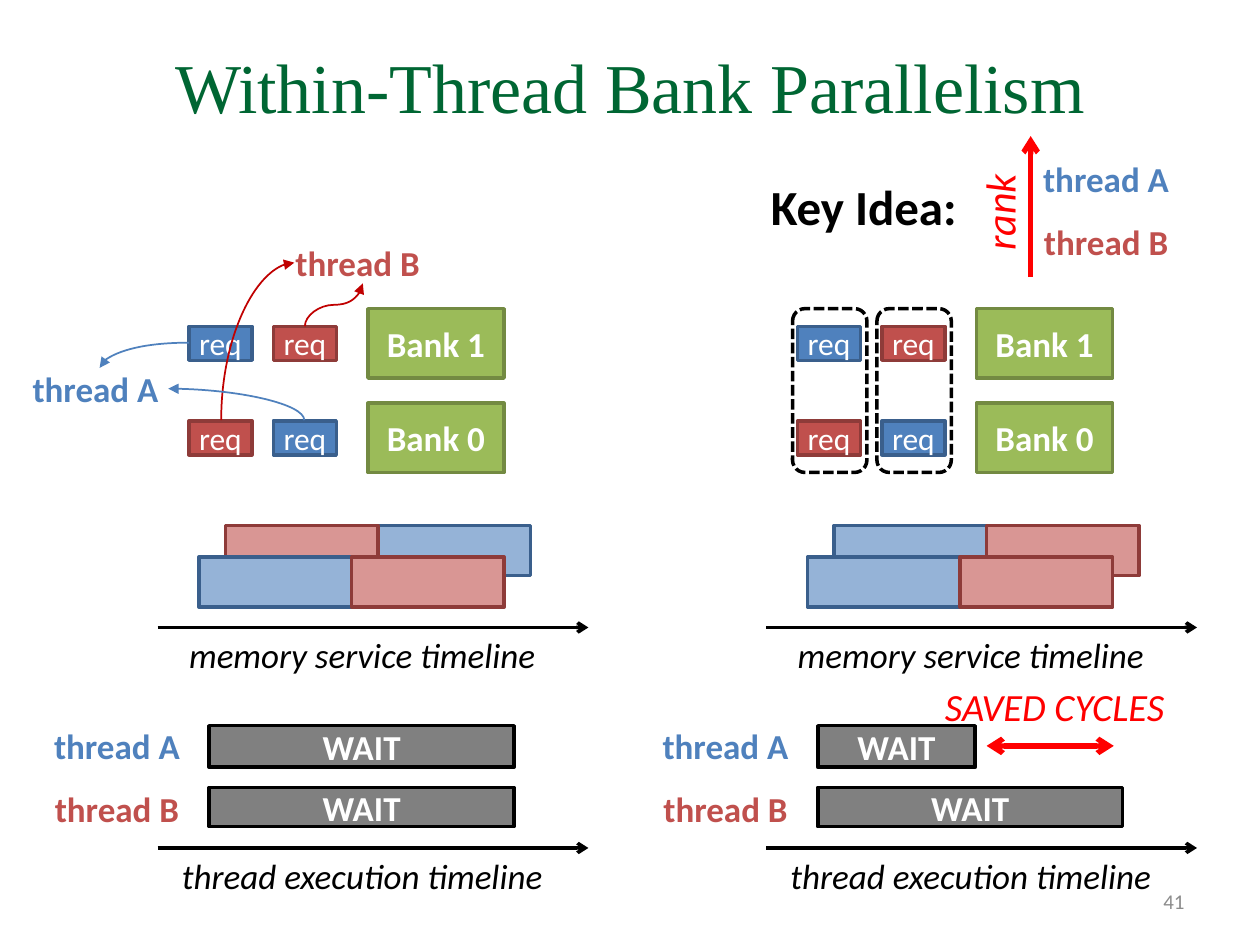
"""Build the slide on within-thread bank parallelism."""
from lxml.etree import SubElement
from pptx import Presentation
from pptx.dml.color import RGBColor
from pptx.enum.dml import MSO_LINE_DASH_STYLE as Dash
from pptx.enum.shapes import MSO_CONNECTOR as Link, MSO_SHAPE as Shape
from pptx.enum.text import MSO_ANCHOR as Anchor, PP_ALIGN as Align
from pptx.oxml.ns import qn
from pptx.util import Inches, Pt

COLORS = {
    "black": "000000", "white": "FFFFFF", "title": "006633", "number": "8C8C8C",
    "alert": "FF0000", "curve": "C00000", "wait": "808080",
    "bank": "9BBB59", "bank_edge": "738A42",
    "A": "4F81BD", "A_light": "95B3D7", "A_edge": "3A5F8C",
    "B": "C0504D", "B_light": "D99694", "B_edge": "8E3B39",
}


def rgb(name):
    return RGBColor.from_string(COLORS[name])


def add_block(at, text="", size=20, color="white", fill=None, edge=None, bold=False,
              italic=False, inset=0.0, anchor=Anchor.MIDDLE, align=Align.CENTER,
              wrap=True, spacing=1.0, form=Shape.RECTANGLE):
    place = [Inches(length) for length in at]
    if edge:
        block = slide.shapes.add_shape(form, *place)
        block.shadow.inherit = False
        block.line.color.rgb = rgb(edge)
        block.line.width = Pt(2)
        if fill:
            block.fill.solid()
            block.fill.fore_color.rgb = rgb(fill)
        else:
            block.fill.background()
    else:
        block = slide.shapes.add_textbox(*place)
    if text:
        frame = block.text_frame
        frame.text = text
        frame.word_wrap = wrap
        frame.vertical_anchor = anchor
        frame.margin_left = frame.margin_right = Inches(inset)
        line = frame.paragraphs[0]
        line.alignment = align
        line.line_spacing = spacing
        font = line.runs[0].font
        font.name, font.size, font.bold, font.italic = "Calibri", Pt(size), bold, italic
        font.color.rgb = rgb(color)
    return block


def add_arrow(start, end, color="black", width=2, heads=("tailEnd",), head="arrow",
              kind=Link.STRAIGHT):
    arrow = slide.shapes.add_connector(kind, *[Inches(length) for length in start + end])
    arrow.line.color.rgb = rgb(color)
    arrow.line.width = Pt(width)
    for tip in heads:
        SubElement(arrow.line._get_or_add_ln(), qn(f"a:{tip}"), type=head)
    SubElement(arrow._element.spPr, qn("a:effectLst"))
    return arrow


deck = Presentation()
deck.slide_width, deck.slide_height = Inches(10), Inches(7.5)
slide = deck.slides.add_slide(deck.slide_layouts[5])

title = slide.shapes.title
title.left, title.top, title.width, title.height = [Inches(n) for n in (0.5, 0.05, 9, 1.25)]
title.text_frame.text = "Within-Thread Bank Parallelism"
title.text_frame.vertical_anchor = Anchor.MIDDLE
title.text_frame.paragraphs[0].alignment = Align.CENTER
title_font = title.text_frame.paragraphs[0].runs[0].font
title_font.name, title_font.size = "Times New Roman", Pt(40)
title_font.color.rgb = rgb("title")

for left in (6.96, 6.29):
    batch = add_block((left, 2.45, 0.59, 1.3), edge="black", form=Shape.ROUNDED_RECTANGLE)
    batch.line.dash_style = Dash.SQUARE_DOT

bank_rows = [("Bank 0", 3.2, "BA"), ("Bank 1", 2.45, "AB")]
sides = [(0, "BA", 1.79, 2.42), (4.83, "AB", 6.62, 1.25)]
for shift, back_threads, back_left, wait_a in sides:
    for left, top, threads in [(back_left, 4.17, back_threads), (1.58 + shift, 4.42, "AB")]:
        slots = [(left + 1.21 * step, thread) for step, thread in enumerate(threads)]
        for slot_left, thread in sorted(slots, key=lambda slot: slot[1]):
            add_block((slot_left, top, 1.21, 0.4), fill=f"{thread}_light", edge=f"{thread}_edge")

    for bank, top, threads in bank_rows:
        add_block((2.92 + shift, top, 1.08, 0.55), bank, bold=True, inset=0.1,
                  fill="bank", edge="bank_edge")
        for step, thread in enumerate(threads):
            add_block((1.5 + 0.67 * step + shift, top + 0.14, 0.5, 0.27), "req", 18,
                      fill=thread, edge=f"{thread}_edge")

    for top, caption in [(4.98, "memory service timeline"), (6.73, "thread execution timeline")]:
        add_block((1.25 + shift, top, 3.25, 0.44), caption, color="black", italic=True,
                  inset=0.1, anchor=Anchor.TOP)
        add_arrow((1.25 + shift, top), (4.67 + shift, top))

    for top, width, height in [(5.76, wait_a, 0.33), (6.25, 2.42, 0.31)]:
        add_block((1.66 + shift, top, width, height), "WAIT", bold=True,
                  fill="wait", edge="black")

thread_labels = [
    ("A", 0.42, 5.75), ("B", 0.42, 6.25), ("A", 5.25, 5.75), ("B", 5.25, 6.25),
    ("B", 2.33, 1.92), ("A", 0.25, 2.92), ("A", 8.27, 1.25), ("B", 8.27, 1.75),
]
for thread, left, top in thread_labels:
    add_block((left, top, 1.08, 0.33), f"thread {thread} ", color=thread, bold=True)

request_curves = [
    ((2.82, 2.65), (2.48, 2.19), 90, "curvedConnector3", "curve"),
    ((2.67, 3.0), (1.42, 2.42), 90, "curvedConnector2", "curve"),
    ((1.75, 3.75), (2.0, 2.67), 270, "curvedConnector2", "A"),
    ((0.79, 2.92), (1.5, 2.72), 180, "curvedConnector2", "A"),
]
for start, end, turn, bend, color in request_curves:
    curve = add_arrow(start, end, color, 1, head="triangle", kind=Link.CURVE)
    curve._element.spPr.find(qn("a:xfrm")).set("rot", str(turn * 60000))
    curve._element.spPr.find(qn("a:prstGeom")).set("prst", bend)

add_block((6, 1.43, 1.71, 0.49), "Key Idea:", 28, "black", bold=True, inset=0.1,
          wrap=False, spacing=0.8)
rank = add_block((7.56, 1.47, 0.82, 0.43), "rank", 24, "alert", italic=True, inset=0.1,
                 anchor=Anchor.TOP, wrap=False, spacing=0.8)
rank.rotation = 270
add_arrow((8.18, 2.2), (8.18, 1.08), "alert", 3)

add_block((7.32, 5.44, 2.1, 0.4), "SAVED CYCLES", 22, "alert", italic=True, inset=0.1,
          anchor=Anchor.TOP, spacing=0.8)
add_arrow((7.83, 5.92), (8.84, 5.92), "alert", 3, heads=("headEnd", "tailEnd"))

add_block((7.17, 6.95, 2.33, 0.4), "41", 12, "number", inset=0.1, align=Align.RIGHT)

deck.save("out.pptx")
